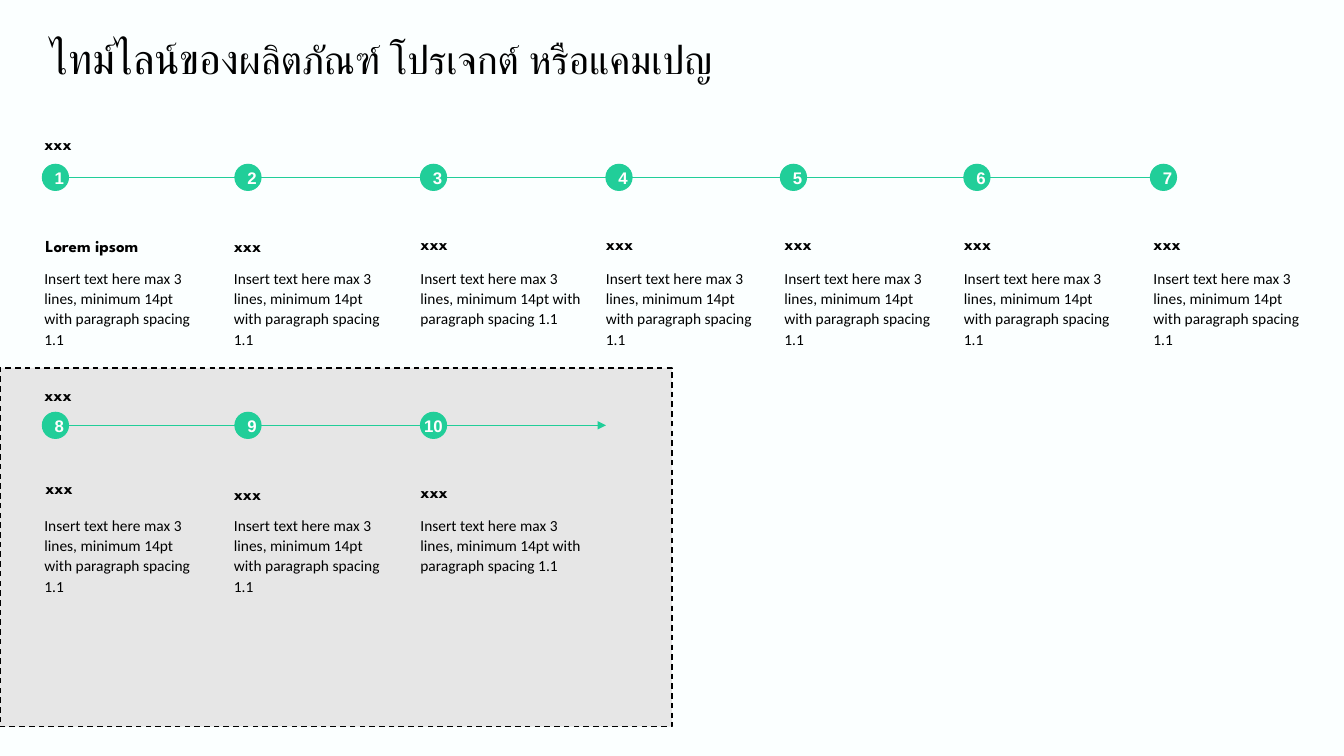
from dataclasses import dataclass

from lxml import etree
from pptx import Presentation
from pptx import util as u
from pptx.dml.color import RGBColor
from pptx.enum import dml, shapes, text
from pptx.oxml import ns

BLACK = RGBColor(0x00, 0x00, 0x00)
WHITE = RGBColor(0xFF, 0xFF, 0xFF)
GREEN = RGBColor(0x21, 0xCE, 0x99)
GREY = RGBColor(0xE6, 0xE6, 0xE6)
PAPER = RGBColor(0xFB, 0xFF, 0xFF)

WIDE, HIGH = 13.33, 7.5
DOT = 0.26
HEAD = 0.3
BODY = "Insert text here max 3 lines, minimum 14pt with paragraph spacing 1.1"
TITLE = [("ไทม์ไลน์ของ", 30), ("ผลิตภัณฑ์ โปรเจกต์ หรือแคมเปญ", 28)]


@dataclass(frozen=True)
class Col:
    left: float
    dot: float
    body: float
    head: float
    drop: float = 0.64


@dataclass(frozen=True)
class Row:
    top: float
    first: int
    count: int
    end: float
    label: float
    body: float
    lead: str = "xxx"
    lift: float = 0


COLS = [
    Col(0.44, 0.42, 1.46, 1.42, 0.66),
    Col(2.32, 2.33, 1.47, 1.27, 0.66),
    Col(4.17, 4.17, 1.64, 0.99),
    Col(6.01, 6.01, 1.53, 1.81),
    Col(7.78, 7.74, 1.46, 1.59),
    Col(9.56, 9.56, 1.46, 1.31),
    Col(11.44, 11.41, 1.47, 1.48),
]
ROWS = [
    Row(1.63, 1, 7, 11.65, 1.28, 2.65, lead="Lorem ipsom"),
    Row(4.09, 8, 3, 6.01, 3.77, 5.1, lift=0.06),
]


def inches(*sizes: float) -> list[int]:
    return [u.Inches(size) for size in sizes]


def pad(frame, left: float, top: float, right: float, low: float) -> None:
    frame.margin_left, frame.margin_top, frame.margin_right, frame.margin_bottom = inches(
        left, top, right, low)


def write(frame, words: str, *, size: float, face: str, color=BLACK, bold=False,
          align=text.PP_ALIGN.LEFT, space: float = 1.0):
    """Add one formatted run to the first paragraph of a frame."""
    line = frame.paragraphs[0]
    line.alignment = align
    line.line_spacing = space
    run = line.add_run()
    run.text = words
    run.font.size = u.Pt(size)
    run.font.name = face
    run.font.bold = bold
    run.font.color.rgb = color
    return run


def add_box(slide, left: float, top: float, width: float, height: float):
    frame = slide.shapes.add_textbox(*inches(left, top, width, height)).text_frame
    frame.word_wrap = True
    frame.auto_size = text.MSO_AUTO_SIZE.SHAPE_TO_FIT_TEXT
    pad(frame, 0, 0, 0, 0)
    return frame


def add_head(slide, words: str, left: float, top: float, width: float) -> None:
    frame = add_box(slide, left, top, width, HEAD)
    pad(frame, 0, 0.05, 0.1, 0.05)
    frame.vertical_anchor = text.MSO_ANCHOR.BOTTOM
    write(frame, words, size=12, face="League Spartan", bold=True)


def add_form(slide, kind, left: float, top: float, width: float, height: float,
             fill: RGBColor, edge: RGBColor, weight: float):
    form = slide.shapes.add_shape(kind, *inches(left, top, width, height))
    form.shadow.inherit = False
    form.fill.solid()
    form.fill.fore_color.rgb = fill
    form.line.color.rgb = edge
    form.line.width = u.Pt(weight)
    return form


def add_dot(slide, num: int, left: float, top: float) -> None:
    """Draw a numbered circle; two digits need an unwrapped line without side margins."""
    dot = add_form(slide, shapes.MSO_SHAPE.OVAL, left, top, DOT, DOT, GREEN, GREEN, 0.75)
    frame = dot.text_frame
    short = num < 10
    side = 0.1 if short else 0
    pad(frame, side, 0.1, side, 0.1)
    frame.word_wrap = short
    frame.vertical_anchor = text.MSO_ANCHOR.MIDDLE
    write(frame, str(num), size=12, face="Arial", color=WHITE, bold=True,
          align=text.PP_ALIGN.CENTER)


def add_arrow(slide, start: float, end: float, y: float) -> None:
    arrow = slide.shapes.add_connector(
        shapes.MSO_CONNECTOR.STRAIGHT, *inches(start, y, end, y))
    arrow.line.color.rgb = GREEN
    arrow.line.width = u.Pt(1)
    etree.SubElement(arrow.line._get_or_add_ln(), ns.qn("a:tailEnd"), type="triangle")
    etree.SubElement(arrow._element.spPr, ns.qn("a:effectLst"))


def add_row(slide, row: Row) -> None:
    add_head(slide, "xxx", COLS[0].left, row.label, COLS[0].head)
    add_arrow(slide, COLS[0].dot + DOT / 2, row.end, row.top + DOT / 2)
    for i, col in enumerate(COLS[:row.count]):
        add_dot(slide, row.first + i, col.dot, row.top)
        lead = i == 0
        add_head(slide, row.lead if lead else "xxx", col.left + 0.01 * lead,
                 row.top + col.drop - row.lift * lead, col.head)
        frame = add_box(slide, col.left, row.body, col.body, 0.81)
        write(frame, BODY, size=11, face="Calibri", space=1.1)


def add_title(slide) -> None:
    title = slide.shapes.title
    title.left, title.top, title.width, title.height = inches(0.5, 0.42, 12.44, 0.45)
    frame = title.text_frame
    frame.word_wrap = True
    frame.auto_size = text.MSO_AUTO_SIZE.NONE
    frame.vertical_anchor = text.MSO_ANCHOR.TOP
    pad(frame, 0, 0, 0, 0)
    for words, size in TITLE:
        run = write(frame, words, size=size, face="Lato", space=0.8)
        etree.SubElement(run.font._element, ns.qn("a:cs"), typeface="Lato")


def main() -> None:
    deck = Presentation()
    deck.slide_width, deck.slide_height = inches(WIDE, HIGH)
    slide = deck.slides.add_slide(deck.slide_layouts.get_by_name("Title Only"))
    slide.background.fill.solid()
    slide.background.fill.fore_color.rgb = PAPER
    panel = add_form(slide, shapes.MSO_SHAPE.RECTANGLE, 0, 3.65, WIDE / 2, 3.56,
                     GREY, BLACK, 1)
    panel.line.dash_style = dml.MSO_LINE.DASH
    for row in ROWS:
        add_row(slide, row)
    add_title(slide)
    deck.save("out.pptx")


if __name__ == "__main__":
    main()
